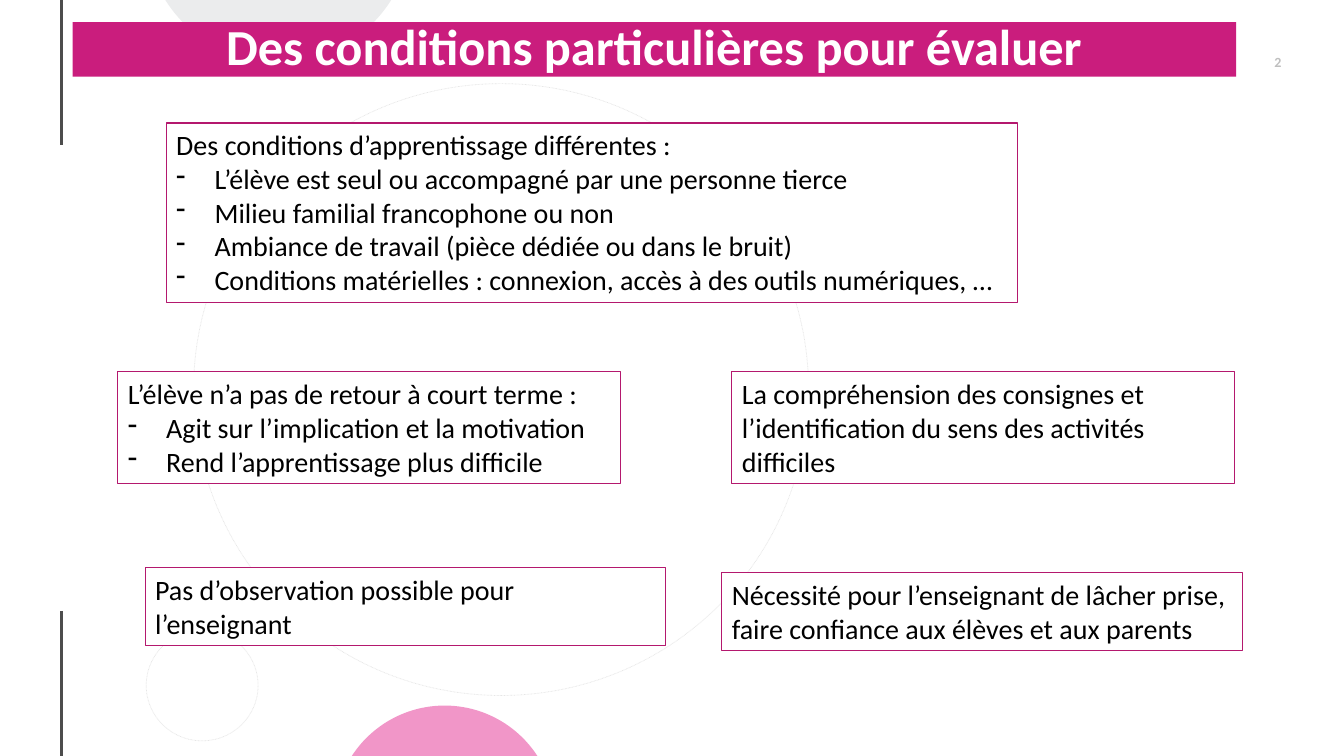
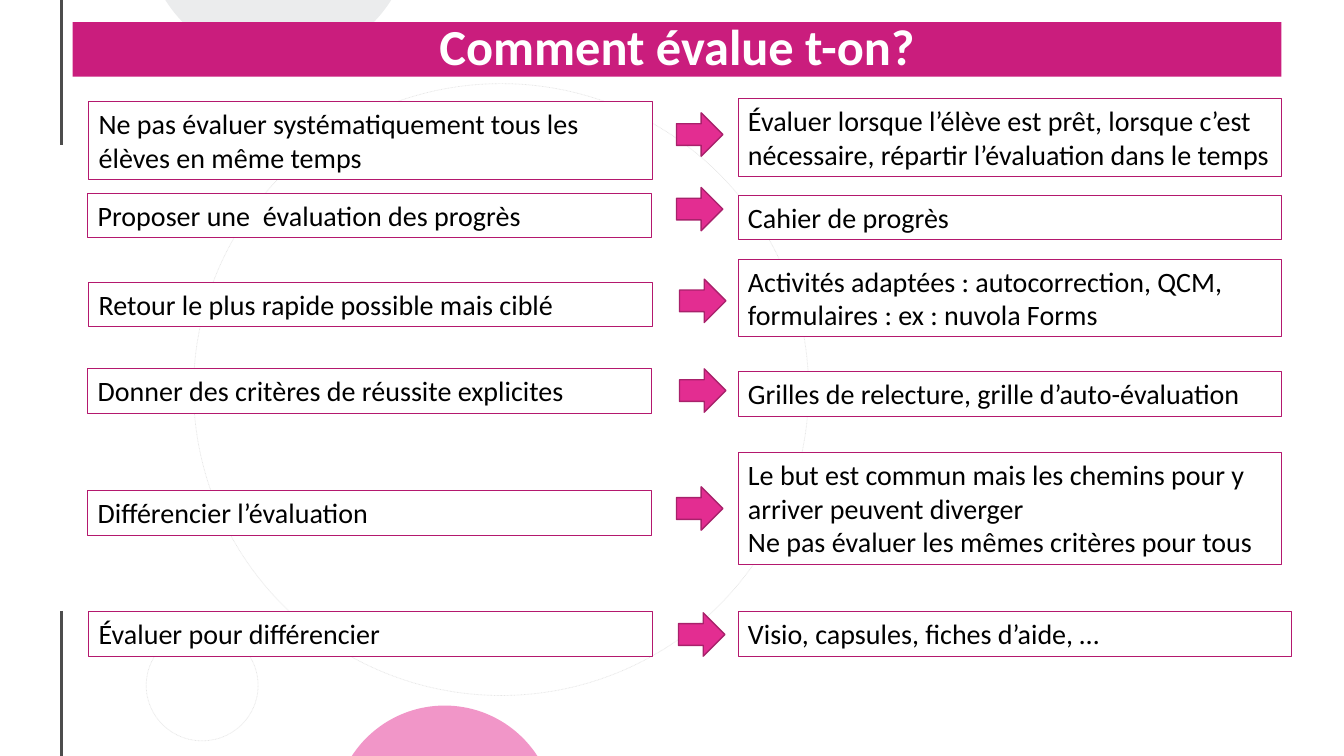
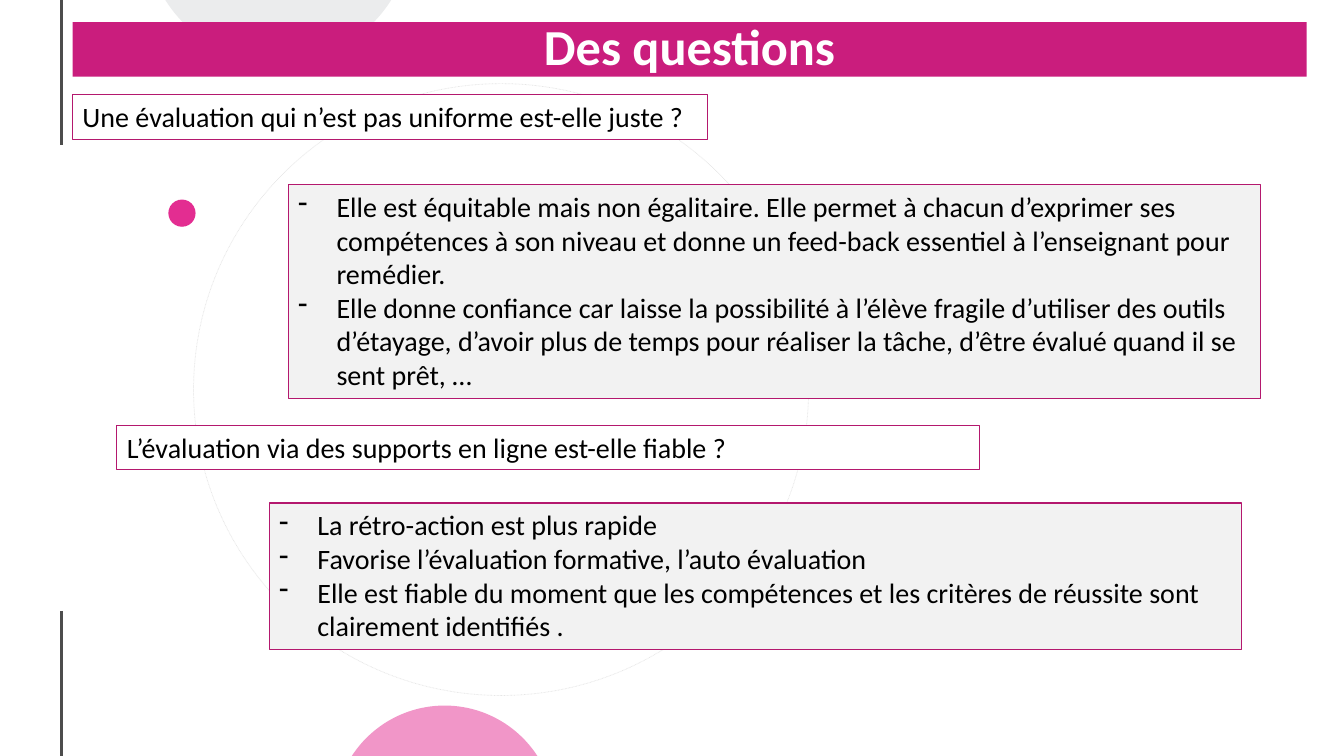
"""Build three slides on assessing pupils in distance learning."""

import math
from dataclasses import dataclass

import lxml.etree
import pptx
import pptx.dml.color
import pptx.enum.dml
import pptx.enum.shapes
import pptx.enum.text
import pptx.oxml.ns
import pptx.shapes.autoshape
import pptx.slide
import pptx.text.text
import pptx.util

Inches = pptx.util.Inches
Pt = pptx.util.Pt
SHAPE = pptx.enum.shapes.MSO_SHAPE
ALIGN = pptx.enum.text.PP_ALIGN

COLOURS = {
    "title": "CA1D7D",
    "border": "B4186E",
    "arrow": "E32D91",
    "arrow_edge": "A8216B",
    "pink_cap": "F196C8",
    "grey_cap": "EBECED",
    "rule": "4D4D4D",
    "circle": "E6E6E6",
    "number": "BFBFBF",
    "answer": "F2F2F2",
    "white": "FFFFFF",
    "black": "000000",
}
FONT = "Calibri"
SLIDE_HEIGHT = 7.5
INDENT = 0.38


@dataclass(frozen=True)
class Box:
    """A framed text: plain lines first, then dashed points."""

    left: float
    top: float
    width: float
    height: float
    lines: tuple[str, ...] = ()
    points: tuple[str, ...] = ()
    fill: str = "white"


@dataclass(frozen=True)
class Pair:
    """A principle, the arrow after it and its practice."""

    principle: Box
    arrow_left: float
    arrow_top: float
    practice: Box


def colour(name: str) -> pptx.dml.color.RGBColor:
    """Return a named colour."""
    return pptx.dml.color.RGBColor.from_string(COLOURS[name])


def paint(shape: pptx.shapes.autoshape.Shape, fill: str | None,
          edge: str | None = None, weight: float = 0.75) -> None:
    """Set the fill and outline and drop the shadow."""
    shape.shadow.inherit = False
    if fill:
        shape.fill.solid()
        shape.fill.fore_color.rgb = colour(fill)
    else:
        shape.fill.background()
    if edge:
        shape.line.color.rgb = colour(edge)
        shape.line.width = Pt(weight)
    else:
        shape.line.fill.background()


def add_preset(slide: pptx.slide.Slide, kind: SHAPE, left: float, top: float,
               width: float, height: float) -> pptx.shapes.autoshape.Shape:
    """Add a preset shape placed in inches."""
    return slide.shapes.add_shape(
        kind, Inches(left), Inches(top), Inches(width), Inches(height))


def style(paragraph: pptx.text.text._Paragraph, size: float, ink: str,
          bold: bool = False, align: ALIGN = ALIGN.LEFT) -> None:
    """Set the font and alignment of a paragraph."""
    paragraph.alignment = align
    paragraph.font.name = FONT
    paragraph.font.size = Pt(size)
    paragraph.font.bold = bold
    paragraph.font.color.rgb = colour(ink)


def add_dash(paragraph: pptx.text.text._Paragraph) -> None:
    """Give a paragraph a hanging dash."""
    properties = paragraph._p.get_or_add_pPr()
    properties.set("marL", str(Inches(INDENT)))
    properties.set("indent", str(-Inches(INDENT)))
    dash = lxml.etree.SubElement(properties, pptx.oxml.ns.qn("a:buChar"))
    dash.set("char", "-")


def add_rule(slide: pptx.slide.Slide, top: float, bottom: float) -> None:
    """Draw a piece of the vertical margin rule."""
    rule = slide.shapes.add_connector(
        pptx.enum.shapes.MSO_CONNECTOR.STRAIGHT,
        Inches(0.61), Inches(top), Inches(0.61), Inches(bottom))
    rule.line.color.rgb = colour("rule")
    rule.line.width = Pt(1.5)
    lxml.etree.SubElement(rule._element.spPr, pptx.oxml.ns.qn("a:effectLst"))


def add_circle(slide: pptx.slide.Slide, left: float, top: float,
               width: float, height: float) -> None:
    """Draw a faint dotted circle."""
    circle = add_preset(slide, SHAPE.OVAL, left, top, width, height)
    paint(circle, None, "circle", 0.5)
    circle.line.dash_style = pptx.enum.dml.MSO_LINE.ROUND_DOT


def add_cap(slide: pptx.slide.Slide, centre: float, edge: float,
            half: float, rise: float, fill: str) -> None:
    """Draw the part of a disc that shows beyond a slide edge."""
    depth = abs(rise)
    radius = (half ** 2 + depth ** 2) / (2 * depth)
    reach = math.asin(half / radius)
    steps = 48
    angles = [reach * (2 * step / steps - 1) for step in range(steps + 1)]
    arc = [
        (Inches(centre + radius * math.sin(angle)),
         Inches(edge + math.copysign(
             radius * math.cos(angle) - radius + depth, rise)))
        for angle in angles
    ]
    builder = slide.shapes.build_freeform(*arc[0])
    builder.add_line_segments(arc[1:], close=True)
    paint(builder.convert_to_shape(), fill)


def add_title(slide: pptx.slide.Slide, text: str, width: float) -> None:
    """Draw the title band."""
    band = add_preset(slide, SHAPE.RECTANGLE, 0.72, 0.22, width, 0.54)
    paint(band, "title")
    frame = band.text_frame
    frame.word_wrap = True
    frame.margin_top = frame.margin_bottom = 0
    frame.vertical_anchor = pptx.enum.text.MSO_ANCHOR.MIDDLE
    title = frame.paragraphs[0]
    title.text = text
    title.line_spacing = 0.9
    style(title, 36, "white", True, ALIGN.CENTER)


def add_number(slide: pptx.slide.Slide, number: str) -> None:
    """Write the slide number."""
    frame = slide.shapes.add_textbox(
        Inches(11.94), Inches(0.48), Inches(0.77), Inches(0.27)).text_frame
    frame.word_wrap = True
    frame.margin_left = frame.margin_right = 0
    frame.margin_top = frame.margin_bottom = 0
    frame.vertical_anchor = pptx.enum.text.MSO_ANCHOR.MIDDLE
    frame.text = number
    style(frame.paragraphs[0], 10, "number", True, ALIGN.RIGHT)


def add_box(slide: pptx.slide.Slide, box: Box) -> None:
    """Draw a framed text."""
    shape = add_preset(
        slide, SHAPE.RECTANGLE, box.left, box.top, box.width, box.height)
    paint(shape, box.fill, "border")
    frame = shape.text_frame
    frame.word_wrap = True
    frame.auto_size = pptx.enum.text.MSO_AUTO_SIZE.SHAPE_TO_FIT_TEXT
    frame.vertical_anchor = pptx.enum.text.MSO_ANCHOR.TOP
    frame.text = "\n".join(box.lines + box.points)
    for index, paragraph in enumerate(frame.paragraphs):
        if index >= len(box.lines):
            add_dash(paragraph)
        style(paragraph, 20, "black")


def add_pair(slide: pptx.slide.Slide, pair: Pair) -> None:
    """Draw a principle, its arrow and its practice."""
    add_box(slide, pair.principle)
    add_box(slide, pair.practice)
    arrow = add_preset(slide, SHAPE.RIGHT_ARROW,
                       pair.arrow_left, pair.arrow_top, 0.46, 0.43)
    paint(arrow, "arrow", "arrow_edge", 1)


def principle(left: float, top: float, text: str, height: float = 0.44) -> Box:
    """Return a box of the left column."""
    return Box(left, top, 5.59, height, (text,))


def practice(top: float, height: float, *lines: str,
             width: float = 5.39) -> Box:
    """Return a box of the right column."""
    return Box(7.32, top, width, height, lines)


def start_slide(deck: pptx.presentation.Presentation, title: str,
                title_width: float, small_circle: bool = True) -> pptx.slide.Slide:
    """Add a blank slide with the shared decoration and title."""
    slide = deck.slides.add_slide(deck.slide_layouts[6])
    add_rule(slide, 6.06, SLIDE_HEIGHT)
    add_rule(slide, 0, 1.44)
    add_circle(slide, 1.92, 0.83, 6.1, 6.07)
    add_cap(slide, 4.41, SLIDE_HEIGHT, 0.92, -0.5, "pink_cap")
    add_cap(slide, 2.76, 0, 1.12, 0.62, "grey_cap")
    if small_circle:
        add_circle(slide, 1.45, 6.25, 1.11, 1.1)
    add_title(slide, title, title_width)
    return slide


CONDITIONS = (
    Box(1.44, 5.63, 5.16, 0.77,
        ("Pas d’observation possible pour l’enseignant",)),
    Box(1.65, 1.22, 8.44, 1.78,
        ("Des conditions d’apprentissage différentes :",),
        ("L’élève est seul ou accompagné par une personne tierce",
         "Milieu familial francophone ou non",
         "Ambiance de travail (pièce dédiée ou dans le bruit)",
         "Conditions matérielles : connexion, accès à des outils numériques, …")),
    Box(1.17, 3.69, 4.98, 1.11,
        ("L’élève n’a pas de retour à court terme :",),
        ("Agit sur l’implication et la motivation",
         "Rend l’apprentissage plus difficile")),
    Box(7.26, 3.69, 4.98, 1.11,
        ("La compréhension des consignes et l’identification du sens "
         "des activités difficiles",)),
    Box(7.16, 5.68, 5.16, 0.77,
        ("Nécessité pour l’enseignant de lâcher prise, faire confiance "
         "aux élèves et aux parents",)),
)

METHODS = (
    Pair(principle(0.88, 1.01, "Ne pas évaluer systématiquement tous les "
                   "élèves en même temps", 0.77),
         6.71, 1.12,
         practice(0.98, 0.77, "Évaluer lorsque l’élève est prêt, lorsque c’est "
                  "nécessaire, répartir l’évaluation dans le temps")),
    Pair(principle(0.87, 1.92, "Proposer une  évaluation des progrès"),
         6.71, 1.86,
         practice(1.94, 0.44, "Cahier de progrès")),
    Pair(principle(0.88, 2.8, "Retour le plus rapide possible mais ciblé"),
         6.74, 2.77,
         practice(2.57, 0.77, "Activités adaptées : autocorrection, QCM, "
                  "formulaires : ex : nuvola Forms")),
    Pair(principle(0.87, 3.66, "Donner des critères de réussite explicites"),
         6.74, 3.66,
         practice(3.69, 0.44, "Grilles de relecture, grille d’auto-évaluation")),
    Pair(principle(0.87, 4.87, "Différencier l’évaluation"),
         6.71, 4.83,
         practice(4.49, 1.11, "Le but est commun mais les chemins pour y "
                  "arriver peuvent diverger",
                  "Ne pas évaluer les mêmes critères pour tous")),
    Pair(principle(0.88, 6.07, "Évaluer pour différencier"),
         6.73, 6.08,
         practice(6.07, 0.44, "Visio, capsules, fiches d’aide, …", width=5.49)),
)

QUESTIONS = (
    Box(0.72, 0.94, 6.3, 0.44,
        ("Une évaluation qui n’est pas uniforme est-elle juste ?",)),
    Box(1.16, 4.22, 8.56, 0.44,
        ("L’évaluation via des supports en ligne est-elle fiable ?",)),
    Box(2.86, 1.83, 9.64, 2.12, points=(
        "Elle est équitable mais non égalitaire. Elle permet à chacun "
        "d’exprimer ses compétences à son niveau et donne un feed-back "
        "essentiel à l’enseignant pour remédier.",
        "Elle donne confiance car laisse la possibilité à l’élève fragile "
        "d’utiliser des outils d’étayage, d’avoir plus de temps pour réaliser "
        "la tâche, d’être évalué quand il se sent prêt, …"), fill="answer"),
    Box(2.67, 4.99, 9.64, 1.45, points=(
        "La rétro-action est plus rapide",
        "Favorise l’évaluation formative, l’auto évaluation",
        "Elle est fiable du moment que les compétences et les critères de "
        "réussite sont clairement identifiés ."), fill="answer"),
)


def main() -> None:
    """Build and save the deck."""
    deck = pptx.Presentation()
    deck.slide_width = Inches(13.33)
    deck.slide_height = Inches(SLIDE_HEIGHT)

    conditions = start_slide(
        deck, "Des conditions particulières pour évaluer", 11.54)
    add_number(conditions, "2")
    for box in CONDITIONS:
        add_box(conditions, box)

    methods = start_slide(deck, "Comment évalue t-on?", 11.99)
    for pair in METHODS:
        add_pair(methods, pair)

    questions = start_slide(deck, "Des questions", 12.24, small_circle=False)
    paint(add_preset(questions, SHAPE.OVAL, 1.67, 1.98, 0.27, 0.27), "arrow")
    for box in QUESTIONS:
        add_box(questions, box)

    deck.save("out.pptx")


if __name__ == "__main__":
    main()
